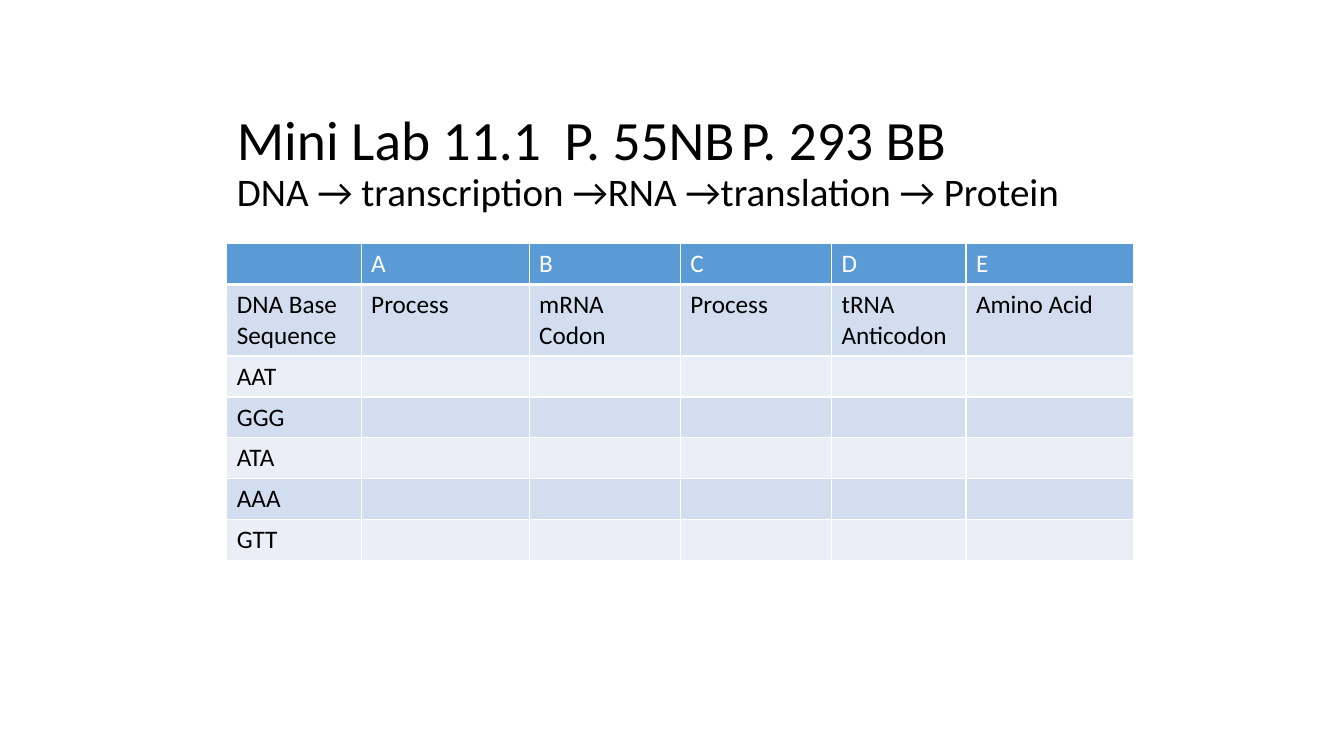
from lxml.etree import SubElement
from pptx import Presentation
from pptx.dml.color import RGBColor
from pptx.enum.text import MSO_ANCHOR, PP_ALIGN
from pptx.oxml.ns import qn
from pptx.util import Pt

WHITE = RGBColor(0xFF, 0xFF, 0xFF)
BLACK = RGBColor(0, 0, 0)
BLUE = RGBColor(0x5B, 0x9B, 0xD5)
BANDS = RGBColor(0xD2, 0xDE, 0xEF), RGBColor(0xEA, 0xEF, 0xF7)
WIDTHS = 96, 120, 108, 108, 96, 120
ROWS = [
    ["", "A", "B", "C", "D", "E"],
    ["DNA Base Sequence", "Process", "mRNA Codon", "Process",
     "tRNA Anticodon", "Amino Acid"],
    ["AAT"], ["GGG"], ["ATA"], ["AAA"], ["GTT"],
]


def write(para, text, size=18, color=BLACK):
    """Add a run of formatted text to a paragraph."""
    run = para.add_run()
    run.text = text
    font = run.font
    font.name, font.size, font.bold = "Calibri", Pt(size), False
    font.color.rgb = color


def set_tabs(para, stops):
    """Give a paragraph left tab stops, in points."""
    tabs = SubElement(para._p.get_or_add_pPr(), qn("a:tabLst"))
    for stop in stops:
        SubElement(tabs, qn("a:tab"), pos=str(Pt(stop)), algn="l")


def edge(cell, base):
    """Draw white borders round a cell, with its own base width."""
    props = cell._tc.get_or_add_tcPr()
    for side, width in zip("LRTB", (1, 1, 1, base)):
        line = SubElement(props, qn("a:ln" + side), w=str(Pt(width)))
        fill = SubElement(line, qn("a:solidFill"))
        SubElement(fill, qn("a:srgbClr"), val=str(WHITE))


def add_title(slide, left, top, width, height):
    """Place the two-line heading in the title placeholder."""
    title = slide.shapes.title
    title.left, title.top = Pt(left), Pt(top)
    title.width, title.height = Pt(width), Pt(height)
    frame = title.text_frame
    frame.word_wrap = True
    frame.vertical_anchor = MSO_ANCHOR.MIDDLE
    para = frame.paragraphs[0]
    para.alignment, para.line_spacing = PP_ALIGN.LEFT, 0.9
    set_tabs(para, (234, 360))
    write(para, "Mini Lab 11.1\tP. 55NB\tP. 293 BB", size=39.6)
    para.add_line_break()
    write(para, "DNA → transcription →RNA →translation → Protein", size=27.9)


def add_grid(slide, left, top, width, height):
    """Place the codon table, with columns shared out by weight."""
    table = slide.shapes.add_table(
        len(ROWS), len(WIDTHS), Pt(left), Pt(top), Pt(width), Pt(height)).table
    for col, part in zip(table.columns, WIDTHS):
        col.width = Pt(width * part / sum(WIDTHS))
    for i, texts in enumerate(ROWS):
        table.rows[i].height = Pt(height / len(ROWS))
        head = i == 0
        for j in range(len(WIDTHS)):
            cell = table.cell(i, j)
            edge(cell, 3 if head else 1)
            cell.fill.solid()
            cell.fill.fore_color.rgb = BLUE if head else BANDS[(i - 1) % 2]
            if j < len(texts) and texts[j]:
                write(cell.text_frame.paragraphs[0], texts[j],
                      color=WHITE if head else BLACK)


def main():
    """Build and save the slide."""
    deck = Presentation()
    deck.slide_width, deck.slide_height = Pt(960), Pt(540)
    slide = deck.slides.add_slide(deck.slide_layouts[5])
    add_title(slide, 162, 72, 648, 90)
    add_grid(slide, 162, 174, 648, 204.4)
    deck.save("out.pptx")


if __name__ == "__main__":
    main()
